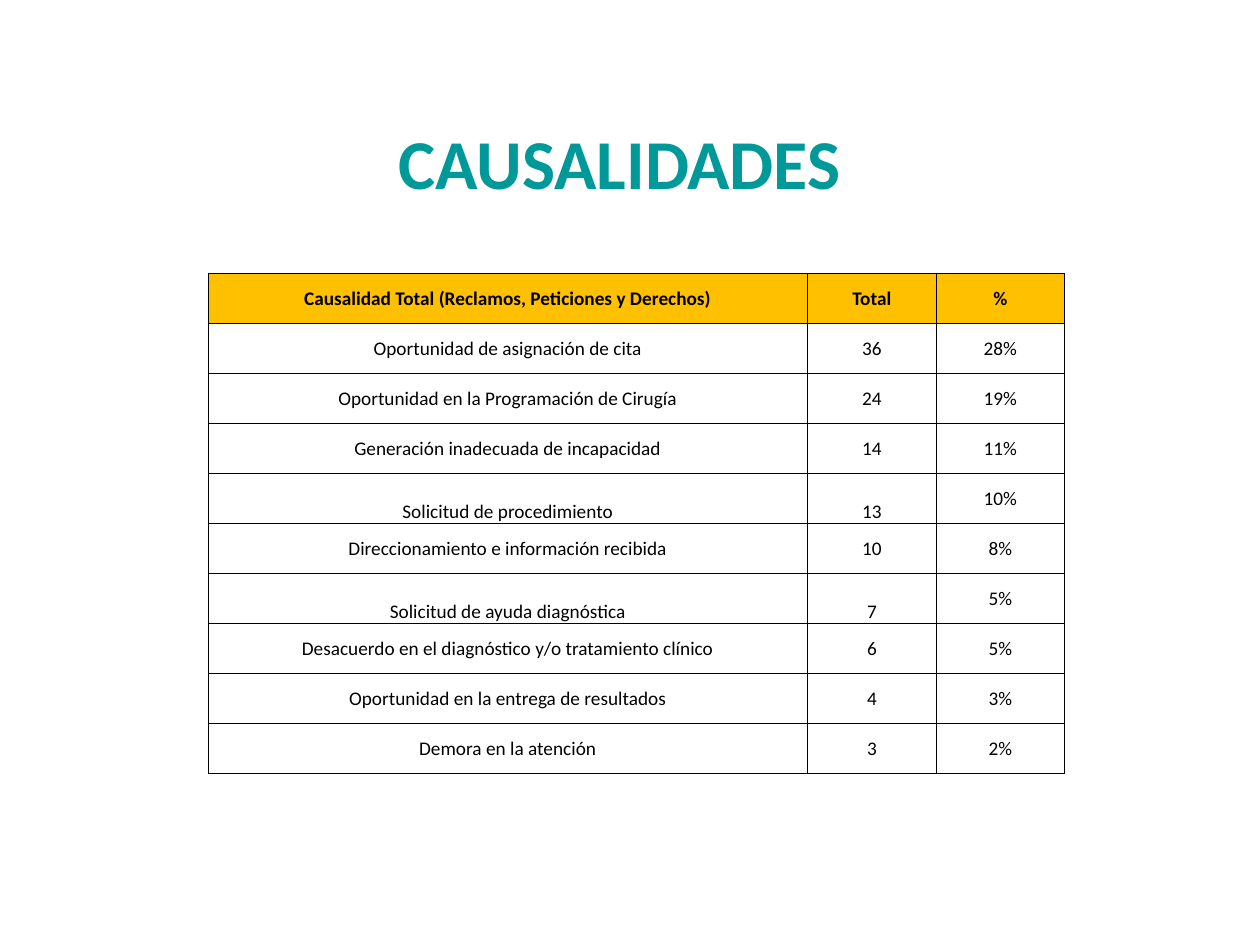
from dataclasses import dataclass

from lxml.etree import SubElement
from pptx import Presentation
from pptx.dml.color import RGBColor
from pptx.enum.text import MSO_ANCHOR as Anchor, MSO_AUTO_SIZE as AutoSize, PP_ALIGN as Align
from pptx.oxml.ns import qn
from pptx.util import Inches, Pt

COLORS = {"title": "009999", "header": "FFC000", "ink": "000000"}
FONT = "Calibri"
COLUMN_WIDTHS = (4.76, 1.02, 1.02)
TABLE_HEIGHT = 3.97


@dataclass
class Cause:
    label: str
    total: str
    share: str
    label_anchor: Anchor = Anchor.MIDDLE


HEADER = Cause("Causalidad Total (Reclamos, Peticiones y Derechos)", "Total", "%")
CAUSES = [
    Cause("Oportunidad de asignación de cita", "36", "28%"),
    Cause("Oportunidad en la Programación de Cirugía", "24", "19%"),
    Cause("Generación inadecuada de incapacidad", "14", "11%"),
    Cause("Solicitud de procedimiento", "13", "10%", Anchor.BOTTOM),
    Cause("Direccionamiento e información recibida", "10", "8%"),
    Cause("Solicitud de ayuda diagnóstica", "7", "5%", Anchor.BOTTOM),
    Cause("Desacuerdo en el diagnóstico y/o tratamiento clínico", "6", "5%"),
    Cause("Oportunidad en la entrega de resultados", "4", "3%"),
    Cause("Demora en la atención", "3", "2%"),
]


def write_centered(frame, text: str, size: float, color: str, bold: bool) -> None:
    paragraph = frame.paragraphs[0]
    paragraph.alignment = Align.CENTER
    run = paragraph.add_run()
    run.text = text
    run.font.name = FONT
    run.font.size = Pt(size)
    run.font.bold = bold
    run.font.color.rgb = RGBColor.from_string(COLORS[color])


def add_borders(cell) -> None:
    properties = cell._tc.get_or_add_tcPr()
    for side in ("a:lnL", "a:lnR", "a:lnT", "a:lnB"):
        line = SubElement(properties, qn(side), w=str(Pt(0.5)))
        fill = SubElement(line, qn("a:solidFill"))
        SubElement(fill, qn("a:srgbClr"), val=COLORS["ink"])


def fill_cell(cell, text: str, anchor: Anchor, is_header: bool) -> None:
    cell.margin_left = cell.margin_right = cell.margin_top = Inches(0.01)
    cell.margin_bottom = 0
    cell.vertical_anchor = anchor
    add_borders(cell)
    if is_header:
        cell.fill.solid()
        cell.fill.fore_color.rgb = RGBColor.from_string(COLORS["header"])
    else:
        cell.fill.background()
    write_centered(cell.text_frame, text, 11, "ink", is_header)


def add_title(slide) -> None:
    title = slide.shapes.title
    title.left, title.top = Inches(1.65), Inches(0.9)
    title.width, title.height = Inches(6.66), Inches(0.77)
    frame = title.text_frame
    frame.word_wrap = True
    frame.auto_size = AutoSize.SHAPE_TO_FIT_TEXT
    frame.vertical_anchor = Anchor.TOP
    write_centered(frame, "CAUSALIDADES ", 40, "title", True)


def add_cause_table(slide, causes: list[Cause]) -> None:
    rows = [HEADER, *causes]
    table = slide.shapes.add_table(
        len(rows), len(COLUMN_WIDTHS), Inches(1.65), Inches(2.17),
        Inches(sum(COLUMN_WIDTHS)), Inches(TABLE_HEIGHT),
    ).table
    table.horz_banding = False
    for column, width in zip(table.columns, COLUMN_WIDTHS):
        column.width = Inches(width)
    for index, cause in enumerate(rows):
        table.rows[index].height = Inches(TABLE_HEIGHT / len(rows))
        entries = (
            (cause.label, cause.label_anchor),
            (cause.total, cause.label_anchor),
            (cause.share, Anchor.MIDDLE),
        )
        for cell, (text, anchor) in zip(table.rows[index].cells, entries):
            fill_cell(cell, text, anchor, cause is HEADER)


def main() -> None:
    presentation = Presentation()
    presentation.slide_width = Inches(10)
    presentation.slide_height = Inches(7.5)
    title_only = presentation.slide_layouts[5]
    slide = presentation.slides.add_slide(title_only)
    add_title(slide)
    add_cause_table(slide, CAUSES)
    presentation.save("out.pptx")


if __name__ == "__main__":
    main()
